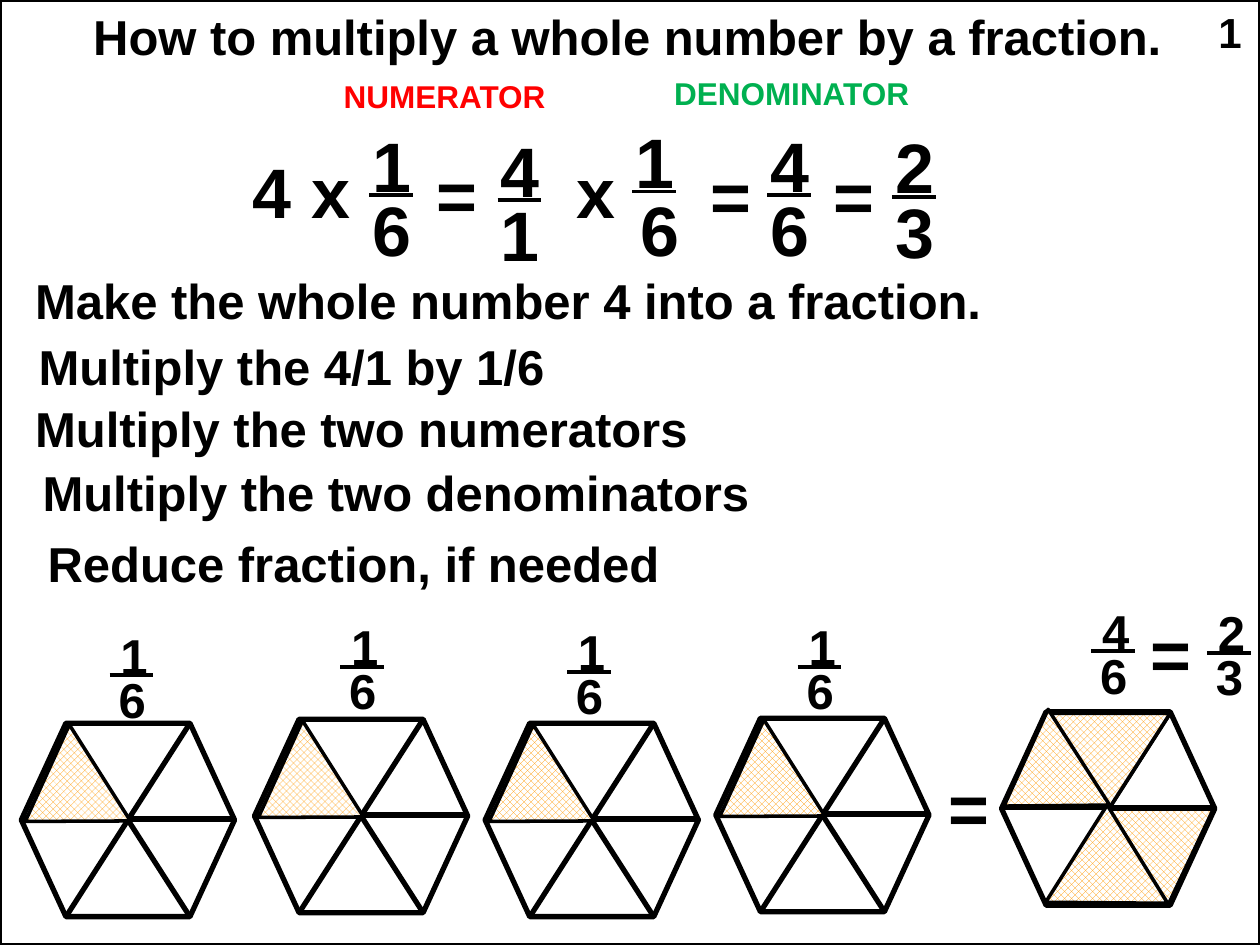
import pptx
import pptx.util
import pptx.dml.color
import pptx.enum.dml
import pptx.enum.shapes
import pptx.enum.text
import pptx.oxml

Cm, Pt = pptx.util.Cm, pptx.util.Pt
SHAPE = pptx.enum.shapes.MSO_SHAPE
COLORS = {"ink": "000000", "paper": "FFFFFF", "top": "FF0000",
          "base": "00B050", "shade": "FF9900"}
FONT = {"name": "Arial", "bold": True}
BOX = {"margin_left": Cm(0.25), "margin_right": Cm(0.25),
       "margin_top": Cm(0.13), "margin_bottom": Cm(0.13),
       "auto_size": pptx.enum.text.MSO_AUTO_SIZE.SHAPE_TO_FIT_TEXT}
HEIGHTS = {18: 0.99, 24: 1.27, 28: 1.42, 40: 1.96}
DIGIT = 1.09
BAR = 0.88
HEX_W, HEX_H, INSET, MIDDLE = 4.3, 3.9, 0.9, 1.93
# Offsets from the bar's left end to the upper and lower digit boxes
OFFSETS = {28: ((-0.03, -1.14), (-0.07, -0.25)),
           40: ((-0.18, -1.6), (-0.18, -0.3))}


def color(name):
    return pptx.dml.color.RGBColor.from_string(COLORS[name])


def apply(target, values):
    for name, value in values.items():
        setattr(target, name, value)


class Board:
    def __init__(self, slide):
        self.shapes = slide.shapes

    def stroke(self, line, width):
        line.color.rgb = color("ink")
        line.width = Pt(width)

    def text(self, words, x, y, width, size, ink="ink", wrap=True):
        box = self.shapes.add_textbox(Cm(x), Cm(y), Cm(width), Cm(HEIGHTS[size]))
        frame = box.text_frame
        apply(frame, {**BOX, "word_wrap": wrap})
        run = frame.paragraphs[0].add_run()
        run.text = words
        apply(run.font, {**FONT, "size": Pt(size)})
        run.font.color.rgb = color(ink)

    def line(self, x1, y1, x2, y2, width):
        link = self.shapes.add_connector(
            pptx.enum.shapes.MSO_CONNECTOR.STRAIGHT, Cm(x1), Cm(y1), Cm(x2), Cm(y2))
        self.stroke(link.line, width)
        props = link._element.spPr
        props.append(pptx.oxml.parse_xml(
            '<a:effectLst xmlns:a="http://schemas.openxmlformats.org/drawingml/2006/main"/>'))

    def frame(self, kind, x, y, width, height, weight):
        shape = self.shapes.add_shape(kind, Cm(x), Cm(y), Cm(width), Cm(height))
        shape.shadow.inherit = False
        shape.fill.background()
        self.stroke(shape.line, weight)
        return shape

    def wedge(self, x, y, points):
        """Draw a shaded triangle, its corners given from a hexagon's top left."""
        start, *rest = [(Cm(x + dx), Cm(y + dy)) for dx, dy in points]
        path = self.shapes.build_freeform(*start)
        path.add_line_segments(rest, close=True)
        shape = path.convert_to_shape()
        shape.shadow.inherit = False
        shape.fill.patterned()
        shape.fill.pattern = pptx.enum.dml.MSO_PATTERN.LARGE_CHECKER_BOARD
        shape.fill.fore_color.rgb = color("shade")
        shape.fill.back_color.rgb = color("paper")
        self.stroke(shape.line, 2)

    def hexagon(self, x, y, over, under=()):
        """Draw six parts, with wedges under and over the middle line."""
        shape = self.frame(SHAPE.HEXAGON, x, y, HEX_W, HEX_H, 3)
        shape.adjustments[0] = INSET / HEX_H
        left, right = x + INSET, x + HEX_W - INSET
        self.line(right, y, left, y + HEX_H, 3)
        self.line(left, y, right, y + HEX_H, 3)
        for points in under:
            self.wedge(x, y, points)
        self.line(x, y + MIDDLE, x + HEX_W, y + MIDDLE, 3)
        for points in over:
            self.wedge(x, y, points)

    def fraction(self, x, y, top, base, size, shift=(0, 0)):
        """Draw a fraction from its bar; shift moves the lower digit."""
        (tx, ty), (bx, by) = OFFSETS[size]
        self.text(top, x + tx, y + ty, DIGIT, size)
        self.line(x, y, x + BAR, y, 2.25)
        self.text(base, x + bx + shift[0], y + by + shift[1], DIGIT, size)


def main():
    deck = pptx.Presentation()
    deck.slide_width, deck.slide_height = Cm(25.4), Cm(19.05)
    board = Board(deck.slides.add_slide(deck.slide_layouts[6]))

    board.text("NUMERATOR", 6.68, 1.42, 4.6, 18, "top", False)
    board.text("DENOMINATOR", 13.34, 1.37, 5.26, 18, "base", False)
    board.frame(SHAPE.RECTANGLE, 0, 0, 25.4, 19.05, 2)
    board.text("How to multiply a whole number by a fraction.", 1.63, 0, 22.76, 28)
    board.text("1", 24.31, 0, DIGIT, 24)

    steps = [("Make the whole number 4 into a fraction.", 0.46, 5.33, 20.35),
             ("Multiply the 4/1 by 1/6", 0.53, 6.65, 12.52),
             ("Multiply the two numerators", 0.46, 7.9, 15.14),
             ("Multiply the two denominators", 0.61, 9.19, 16.33),
             ("Reduce fraction, if needed", 0.71, 10.62, 14.76)]
    for step in steps:
        board.text(*step, 28)

    signs = [("4 x", 4.85, 2.87, 3.07), ("=", 8.56, 2.92, DIGIT),
             ("x", 11.38, 2.87, 1.96), ("=", 14.07, 2.95, DIGIT),
             ("=", 16.56, 2.95, DIGIT), ("=", 18.87, 15.29, DIGIT),
             ("=", 22.94, 12.17, DIGIT)]
    for sign in signs:
        board.text(*sign, 40)

    board.fraction(7.44, 3.94, "1", "6", 40)
    board.fraction(10.03, 4.04, "4", "1", 40)
    board.fraction(12.75, 3.86, "1", "6", 40, (0.1, 0.08))
    board.fraction(15.47, 3.94, "4", "6", 40)
    board.fraction(17.98, 3.97, "2", "3", 40)

    sixth = [(0.97, 0.03), (2.2, 1.97), (0.08, 1.98)]
    for x, y in [(0.43, 14.58), (5.13, 14.5), (9.78, 14.58), (14.43, 14.48)]:
        board.hexagon(x, y, [sixth])
    board.hexagon(
        20.19, 14.35,
        over=[[(0.94, -0.05), (2.18, 1.88), (0.05, 1.9)],
              [(2.13, 1.88), (3.35, 3.86), (0.89, 3.84)]],
        under=[[(0.91, 0.03), (3.4, 0.03), (2.16, 1.96)],
               [(3.35, 3.91), (2.13, 1.96), (4.27, 1.96)]])

    for x, y in [(2.21, 13.61), (6.86, 13.44), (11.43, 13.54), (16.08, 13.44)]:
        board.fraction(x, y, "1", "6", 28)
    board.fraction(22, 13.13, "4", "6", 28)
    board.fraction(24.33, 13.16, "2", "3", 28)

    deck.save("out.pptx")


if __name__ == "__main__":
    main()
